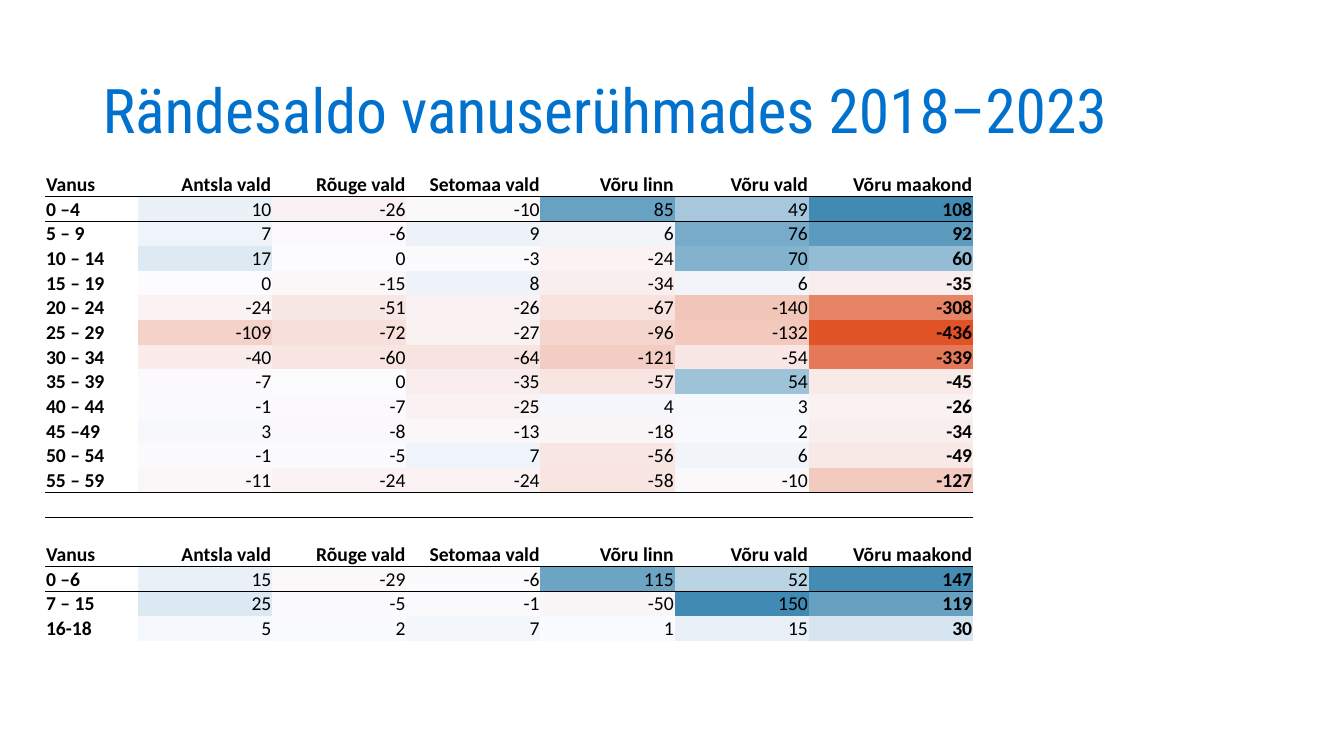
from dataclasses import dataclass

from lxml import etree
from pptx import Presentation
from pptx.dml.color import RGBColor
from pptx.enum.text import MSO_ANCHOR, PP_ALIGN
from pptx.oxml.ns import qn
from pptx.slide import Slide
from pptx.table import Table, _Cell
from pptx.util import Cm, Pt

LEFT, RIGHT = PP_ALIGN.LEFT, PP_ALIGN.RIGHT
MIDDLE, BOTTOM = MSO_ANCHOR.MIDDLE, MSO_ANCHOR.BOTTOM

TITLE_BLUE = RGBColor(0x00, 0x72, 0xCE)
BLACK = RGBColor(0x00, 0x00, 0x00)
LOSS_RED = RGBColor(0xDF, 0x53, 0x27)
NEUTRAL = RGBColor(0xFC, 0xFC, 0xFF)
GAIN_BLUE = RGBColor(0x41, 0x8A, 0xB3)

PLAIN_TABLE_STYLE = "{2D5ABB26-0587-4C30-8999-92F81FD0307C}"
HEADINGS = ["Vanus", "Antsla vald", "Rõuge vald", "Setomaa vald",
            "Võru linn", "Võru vald", "Võru maakond"]
COLUMN_WIDTHS = [Cm(2.34)] + [Cm(3.38)] * 5 + [Cm(4.14)]
ROW_HEIGHT = Cm(0.62)
INSET = Cm(0.02)
TEXT_SIZE = Pt(14)
GAP_ROWS = 2


@dataclass(frozen=True)
class AgeGroup:
    label: str
    balances: tuple[int, ...]


@dataclass(frozen=True)
class Block:
    """Age groups under one heading row, with the ends of their colour scale."""
    lowest: int
    highest: int
    groups: list[AgeGroup]


FIVE_YEAR_GROUPS = Block(-436, 108, [
    AgeGroup("0 –4", (10, -26, -10, 85, 49, 108)),
    AgeGroup("5 – 9", (7, -6, 9, 6, 76, 92)),
    AgeGroup("10 – 14", (17, 0, -3, -24, 70, 60)),
    AgeGroup("15 – 19", (0, -15, 8, -34, 6, -35)),
    AgeGroup("20 – 24", (-24, -51, -26, -67, -140, -308)),
    AgeGroup("25 – 29", (-109, -72, -27, -96, -132, -436)),
    AgeGroup("30 – 34", (-40, -60, -64, -121, -54, -339)),
    AgeGroup("35 – 39", (-7, 0, -35, -57, 54, -45)),
    AgeGroup("40 – 44", (-1, -7, -25, 4, 3, -26)),
    AgeGroup("45 –49", (3, -8, -13, -18, 2, -34)),
    AgeGroup("50 – 54", (-1, -5, 7, -56, 6, -49)),
    AgeGroup("55 – 59", (-11, -24, -24, -58, -10, -127)),
])
SCHOOL_AGE_GROUPS = Block(-1400, 150, [
    AgeGroup("0 –6", (15, -29, -6, 115, 52, 147)),
    AgeGroup("7 – 15", (25, -5, -1, -50, 150, 119)),
    AgeGroup("16-18", (5, 2, 7, 1, 15, 30)),
])


def heat_colour(balance: int, block: Block) -> RGBColor:
    """Blend from neutral towards red for losses and blue for gains."""
    end, limit = (LOSS_RED, block.lowest) if balance < 0 else (GAIN_BLUE, block.highest)
    share = balance / limit
    return RGBColor(*(int(n + (e - n) * share) for n, e in zip(NEUTRAL, end)))


def fill_cell(cell: _Cell, text: str, align: PP_ALIGN, bold: bool) -> None:
    cell.text_frame.text = text
    paragraph = cell.text_frame.paragraphs[0]
    paragraph.alignment = align
    for run in paragraph.runs:
        run.font.name = "Calibri"
        run.font.size = TEXT_SIZE
        run.font.bold = bold
        run.font.color.rgb = BLACK


def add_border(cell: _Cell, edge: str) -> None:
    line = etree.Element(qn(f"a:{edge}"), w=str(Pt(0.5)))
    solid = etree.SubElement(line, qn("a:solidFill"))
    etree.SubElement(solid, qn("a:srgbClr"), val=str(BLACK))
    cell._tc.get_or_add_tcPr().insert(0, line)


def rule_below(table: Table, row: int) -> None:
    for column in range(len(HEADINGS)):
        add_border(table.cell(row, column), "lnB")
        add_border(table.cell(row + 1, column), "lnT")


def fill_block(table: Table, block: Block, top: int) -> None:
    for column, heading in enumerate(HEADINGS):
        fill_cell(table.cell(top, column), heading, RIGHT if column else LEFT, True)
    for row, group in enumerate(block.groups, top + 1):
        fill_cell(table.cell(row, 0), group.label, LEFT, True)
        for column, balance in enumerate(group.balances, 1):
            cell = table.cell(row, column)
            fill_cell(cell, str(balance), RIGHT, column == len(group.balances))
            cell.fill.solid()
            cell.fill.fore_color.rgb = heat_colour(balance, block)
    rule_below(table, top)


def add_title(slide: Slide) -> None:
    title = slide.shapes.title
    title.left, title.top, title.width, title.height = Cm(2.33), Cm(1.01), Cm(29.21), Cm(3.68)
    frame = title.text_frame
    frame.text = "Rändesaldo vanuserühmades 2018–2023"
    frame.vertical_anchor = MIDDLE
    paragraph = frame.paragraphs[0]
    paragraph.alignment = LEFT
    paragraph.line_spacing = 0.9
    font = paragraph.runs[0].font
    font.name = "Roboto Condensed"
    font.size = Pt(44)
    font.color.rgb = TITLE_BLUE


def add_balance_table(slide: Slide) -> None:
    last_five_year_row = len(FIVE_YEAR_GROUPS.groups)
    school_age_top = last_five_year_row + 1 + GAP_ROWS
    row_count = school_age_top + 1 + len(SCHOOL_AGE_GROUPS.groups)
    frame = slide.shapes.add_table(row_count, len(HEADINGS), Cm(1.14), Cm(4.33),
                                   sum(COLUMN_WIDTHS), ROW_HEIGHT * row_count)
    table = frame.table
    table.first_row = table.horz_banding = False
    table._tbl.tblPr.find(qn("a:tableStyleId")).text = PLAIN_TABLE_STYLE
    for column, width in zip(table.columns, COLUMN_WIDTHS):
        column.width = width
    for row in table.rows:
        row.height = ROW_HEIGHT
    for cell in table.iter_cells():
        cell.margin_left = cell.margin_right = cell.margin_top = INSET
        cell.margin_bottom = 0
        cell.vertical_anchor = BOTTOM
        cell.fill.background()
    fill_block(table, FIVE_YEAR_GROUPS, 0)
    fill_block(table, SCHOOL_AGE_GROUPS, school_age_top)
    rule_below(table, last_five_year_row)
    for row in range(last_five_year_row + 1, school_age_top):
        for cell in table.rows[row].cells:
            paragraph = cell.text_frame.paragraphs[0]
            etree.SubElement(paragraph._p, qn("a:endParaRPr"),
                             sz=str(int(TEXT_SIZE.pt * 100)))


def main() -> None:
    presentation = Presentation()
    presentation.slide_width, presentation.slide_height = Cm(33.87), Cm(19.05)
    slide = presentation.slides.add_slide(presentation.slide_layouts[5])
    add_title(slide)
    add_balance_table(slide)
    presentation.save("out.pptx")


if __name__ == "__main__":
    main()
